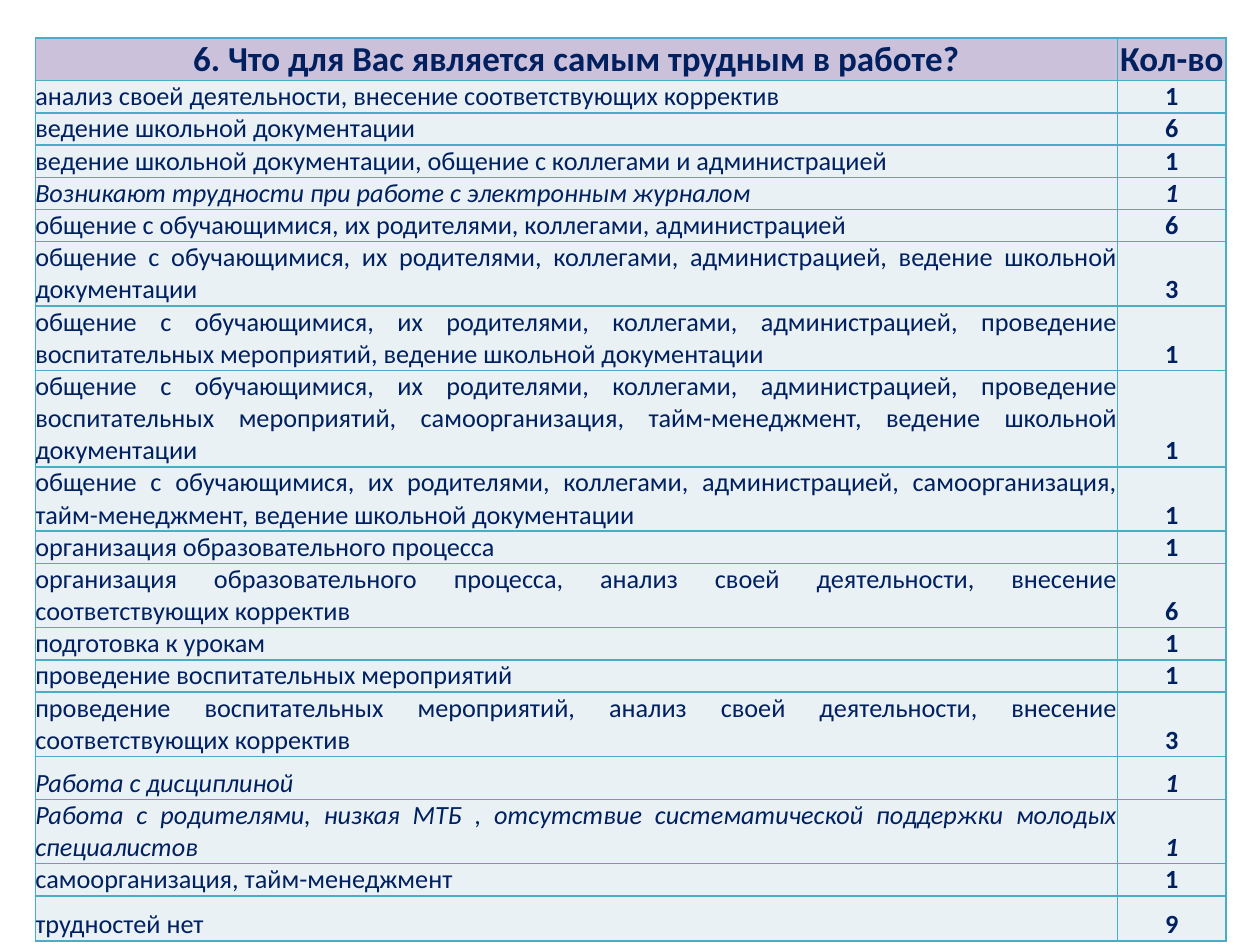
"""Build a slide with a table of survey answers about difficulties at work."""
from lxml.etree import SubElement
from pptx import Presentation
from pptx.dml.color import RGBColor
from pptx.enum.text import MSO_ANCHOR as Anchor, PP_ALIGN as Align
from pptx.oxml.ns import qn
from pptx.util import Inches, Pt

NAVY = RGBColor(0x00, 0x20, 0x60)
LILAC = RGBColor(0xCC, 0xC1, 0xDA)
PALE = RGBColor(0xE9, 0xF1, 0xF5)
TEAL = RGBColor(0x4B, 0xAC, 0xC6)

FONT = "Calibri"
LINE = 0.25
HEADER_HEIGHT = 0.34
COLUMNS = (8.59, 0.86)
HEADER = ("6. Что для Вас является самым трудным в работе?", "Кол-во")

PEOPLE = "общение с обучающимися, их родителями, коллегами, администрацией"
PAPERS = "ведение школьной документации"
EVENTS = "проведение воспитательных мероприятий"
PLANNING = "самоорганизация, тайм-менеджмент"
ANALYSIS = "анализ своей деятельности, внесение соответствующих корректив"
PROCESS = "организация образовательного процесса"

# answer, count, row height, italic
ANSWERS = [
    (ANALYSIS, 1, LINE, False),
    (PAPERS, 6, LINE, False),
    (f"{PAPERS}, общение с коллегами и администрацией", 1, LINE, False),
    ("Возникают трудности при работе с электронным журналом", 1, LINE, True),
    (PEOPLE, 6, LINE, False),
    (f"{PEOPLE}, {PAPERS}", 3, 2 * LINE, False),
    (f"{PEOPLE}, {EVENTS}, {PAPERS}", 1, 2 * LINE, False),
    (f"{PEOPLE}, {EVENTS}, {PLANNING}, {PAPERS}", 1, 3 * LINE, False),
    (f"{PEOPLE}, {PLANNING}, {PAPERS}", 1, 2 * LINE, False),
    (PROCESS, 1, LINE, False),
    (f"{PROCESS}, {ANALYSIS}", 6, 2 * LINE, False),
    ("подготовка к урокам", 1, LINE, False),
    (EVENTS, 1, LINE, False),
    (f"{EVENTS}, {ANALYSIS}", 3, 2 * LINE, False),
    ("Работа с дисциплиной", 1, 0.34, True),
    ("Работа с родителями, низкая МТБ , отсутствие систематической "
     "поддержки молодых специалистов", 1, 2 * LINE, True),
    (PLANNING, 1, LINE, False),
    ("трудностей нет", 9, 0.36, False),
]


def add_borders(cell):
    properties = cell._tc.get_or_add_tcPr()
    for side in ("lnL", "lnR", "lnT", "lnB"):
        line = SubElement(properties, qn(f"a:{side}"), w=str(Pt(1)))
        fill = SubElement(line, qn("a:solidFill"))
        SubElement(fill, qn("a:srgbClr"), val=str(TEAL))


def write_cell(cell, text, color, size, align, anchor, bold, italic=False):
    add_borders(cell)
    cell.fill.solid()
    cell.fill.fore_color.rgb = color
    cell.margin_left = cell.margin_right = 0
    cell.margin_top = cell.margin_bottom = 0
    cell.vertical_anchor = anchor
    cell.text_frame.text = text
    para = cell.text_frame.paragraphs[0]
    para.alignment = align
    font = para.runs[0].font
    font.name, font.size = FONT, Pt(size)
    font.bold, font.italic = bold, italic
    font.color.rgb = NAVY


def main():
    deck = Presentation()
    deck.slide_width, deck.slide_height = Inches(10), Inches(7.5)
    page = deck.slides.add_slide(deck.slide_layouts[6])

    heights = [HEADER_HEIGHT] + [height for _, _, height, _ in ANSWERS]
    table = page.shapes.add_table(
        len(heights), len(COLUMNS), Inches(0.28), Inches(0.3),
        Inches(sum(COLUMNS)), Inches(sum(heights))).table
    for column, width in zip(table.columns, COLUMNS):
        column.width = Inches(width)
    for row, height in zip(table.rows, heights):
        row.height = Inches(height)

    for index, text in enumerate(HEADER):
        write_cell(table.cell(0, index), text, LILAC, 20, Align.CENTER, Anchor.TOP, True)
    for index, (answer, count, _, italic) in enumerate(ANSWERS, start=1):
        write_cell(table.cell(index, 0), answer, PALE, 15,
                   Align.JUSTIFY, Anchor.BOTTOM, False, italic)
        write_cell(table.cell(index, 1), str(count), PALE, 15,
                   Align.CENTER, Anchor.BOTTOM, True, italic)

    deck.save("out.pptx")


if __name__ == "__main__":
    main()
